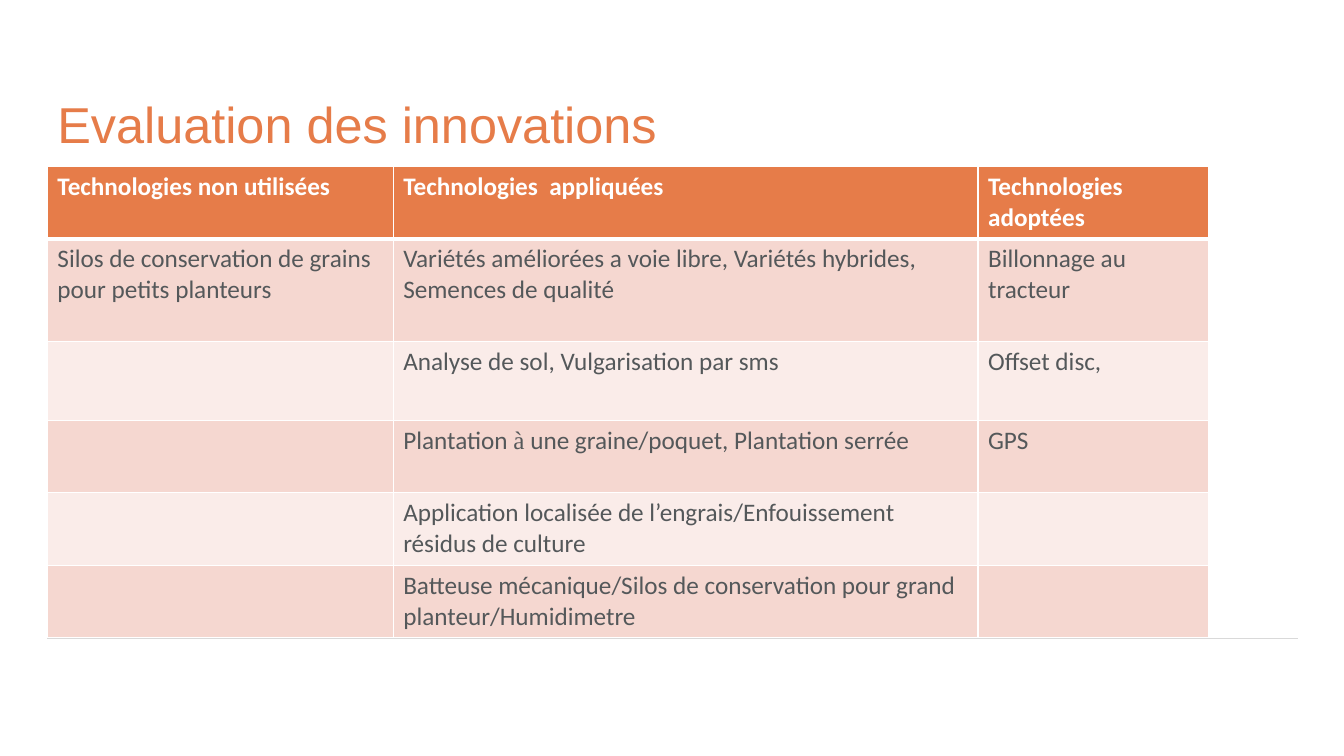
from lxml import etree
from pptx import Presentation
from pptx import util as u
from pptx.dml.color import RGBColor
from pptx.enum import shapes, text
from pptx.oxml import ns

ORANGE = RGBColor(0xE6, 0x7C, 0x49)
PINK = RGBColor(0xF5, 0xD7, 0xD0)
PALE_PINK = RGBColor(0xFA, 0xEC, 0xE9)
GREY = RGBColor(0x54, 0x58, 0x5A)
LIGHT_GREY = RGBColor(0xD9, 0xD9, 0xD9)
WHITE = RGBColor(0xFF, 0xFF, 0xFF)

COLUMN_WIDTHS = (3.43, 5.8, 2.29)
ROW_HEIGHTS = (0.72, 1.02, 0.78, 0.72, 0.72, 0.72)
INNOVATIONS = (
    ("Technologies non utilisées", "Technologies  appliquées", "Technologies adoptées"),
    ("Silos de conservation de grains pour petits planteurs",
     "Variétés améliorées a voie libre, Variétés hybrides, Semences de qualité",
     "Billonnage au tracteur"),
    ("", "Analyse de sol, Vulgarisation par sms", "Offset disc,"),
    ("", "Plantation à une graine/poquet, Plantation serrée", "GPS"),
    ("", "Application localisée de l’engrais/Enfouissement résidus de culture", ""),
    ("", "Batteuse mécanique/Silos de conservation pour grand planteur/Humidimetre", ""),
)


def add_footer_rule(slide, left, top, width):
    """Draw the thin rule that closes the content area."""
    rule = slide.shapes.add_connector(
        shapes.MSO_CONNECTOR.STRAIGHT,
        u.Inches(left), u.Inches(top), u.Inches(left + width), u.Inches(top))
    rule.line.color.rgb = LIGHT_GREY
    rule.line.width = u.Pt(0.25)
    etree.SubElement(rule._element.spPr, ns.qn("a:effectLst"))


def add_title(slide, left, top, width, height):
    """Write the slide title in the given box."""
    title = slide.shapes.add_textbox(*map(u.Inches, (left, top, width, height)))
    frame = title.text_frame
    frame.word_wrap = True
    frame.vertical_anchor = text.MSO_ANCHOR.TOP
    frame.margin_top = u.Inches(0.1)
    frame.text = "Evaluation des innovations"
    heading = frame.paragraphs[0]
    heading.line_spacing = 0.9
    heading.font.size = u.Pt(36)
    heading.font.name = "Arial"
    heading.font.color.rgb = ORANGE


def set_borders(cell, top_width, bottom_width):
    """Give a cell white borders, with its own top and bottom widths."""
    properties = cell._tc.get_or_add_tcPr()
    for side, width in (("L", 1), ("R", 1), ("T", top_width), ("B", bottom_width)):
        border = etree.SubElement(properties, ns.qn(f"a:ln{side}"), w=str(u.Pt(width)))
        fill = etree.SubElement(border, ns.qn("a:solidFill"))
        etree.SubElement(fill, ns.qn("a:srgbClr"), val=str(WHITE))


def write_cell(cell, wording, is_header):
    """Write a cell's wording, with its accented à in a serif font."""
    paragraph = cell.text_frame.paragraphs[0]
    paragraph.font.size = u.Pt(18)
    for part in filter(None, wording.partition("à")):
        run = paragraph.add_run()
        run.text = part
        run.font.name = "Times New Roman" if part == "à" else "Calibri"
        run.font.size = u.Pt(18)
        run.font.bold = is_header
        run.font.color.rgb = WHITE if is_header else GREY


def add_innovation_table(slide, left, top):
    """Build the banded table of technologies from its top left corner."""
    table = slide.shapes.add_table(
        len(ROW_HEIGHTS), len(COLUMN_WIDTHS), u.Inches(left), u.Inches(top),
        u.Inches(sum(COLUMN_WIDTHS)), u.Inches(sum(ROW_HEIGHTS))).table
    for column, width in zip(table.columns, COLUMN_WIDTHS):
        column.width = u.Inches(width)
    for index, (row, height, wordings) in enumerate(
            zip(table.rows, ROW_HEIGHTS, INNOVATIONS)):
        row.height = u.Inches(height)
        is_header = index == 0
        band = ORANGE if is_header else (PALE_PINK, PINK)[index % 2]
        for cell, wording in zip(row.cells, wordings):
            set_borders(cell, 3 if index == 1 else 1, 3 if is_header else 1)
            cell.fill.solid()
            cell.fill.fore_color.rgb = band
            write_cell(cell, wording, is_header)


def main():
    """Build the slide and save it."""
    presentation = Presentation()
    presentation.slide_width = u.Inches(13.33)
    presentation.slide_height = u.Inches(7.5)
    slide = presentation.slides.add_slide(presentation.slide_layouts[6])
    left, width = 0.47, 12.4
    add_footer_rule(slide, left, 6.33, width)
    add_title(slide, left, 0.89, width, 0.54)
    add_innovation_table(slide, left, 1.65)
    presentation.save("out.pptx")


if __name__ == "__main__":
    main()
